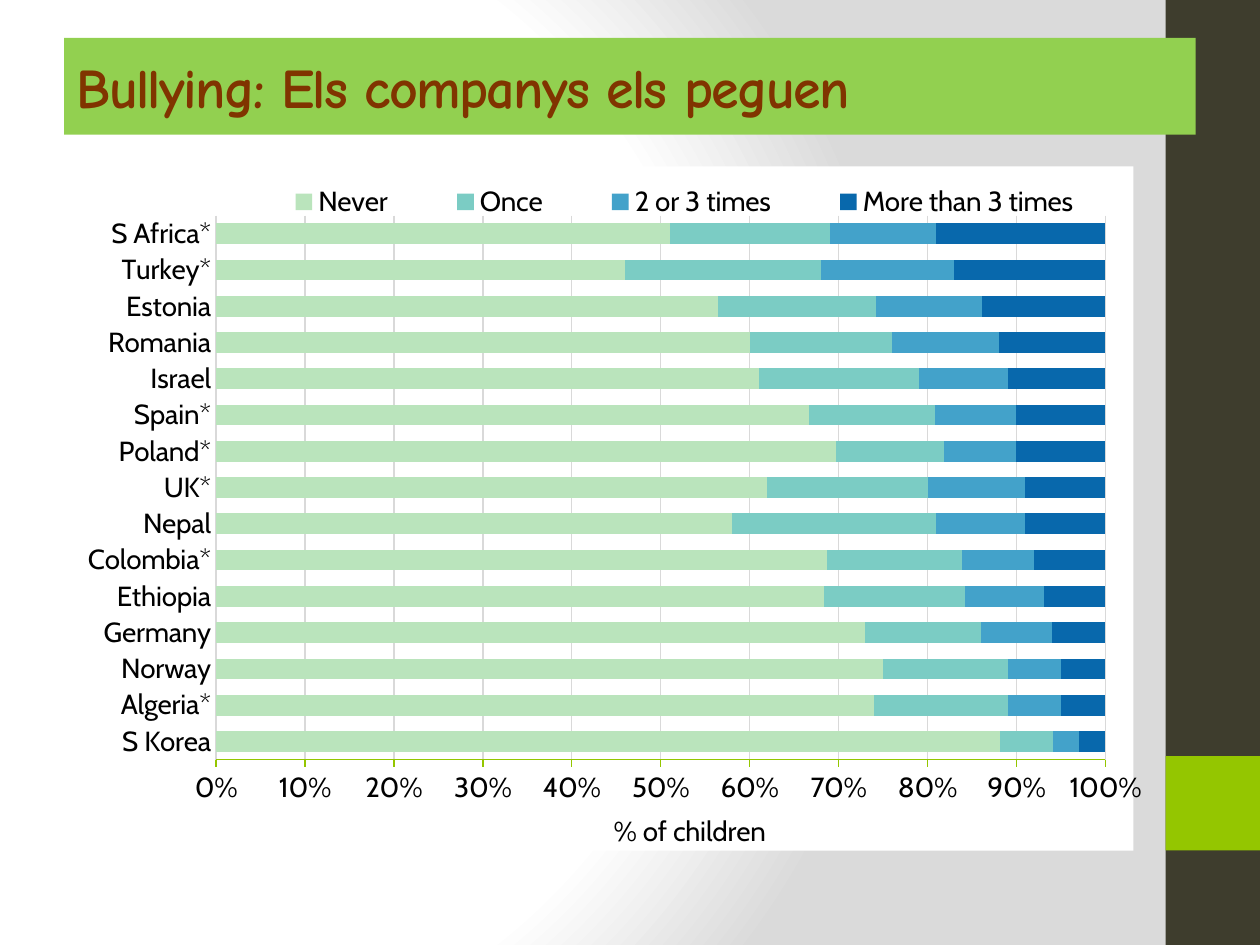
from dataclasses import dataclass

from lxml.etree import SubElement
from pptx import Presentation
from pptx.chart.data import CategoryChartData
from pptx.dml.color import RGBColor
from pptx.enum.chart import XL_CHART_TYPE, XL_LEGEND_POSITION, XL_TICK_MARK
from pptx.enum.shapes import MSO_SHAPE
from pptx.enum.text import MSO_ANCHOR, PP_ALIGN
from pptx.oxml import parse_xml
from pptx.oxml.ns import nsdecls, qn
from pptx.util import Inches, Pt


@dataclass(frozen=True)
class Theme:
    white: str = "FFFFFF"
    shade: str = "DADADA"
    side_band: str = "3E3D2D"
    accent: str = "94C600"
    title_fill: str = "92D050"
    title_text: str = "803400"
    text: str = "000000"
    grid: str = "D9D9D9"
    title_font: str = "Comic Neue"
    chart_font: str = "Cabin"
    title_size: int = 32
    chart_size: int = 16
    line_width: float = 0.75


THEME = Theme()

COUNTRIES = [
    "S Korea", "Algeria*", "Norway", "Germany", "Ethiopia",
    "Colombia*", "Nepal", "UK*", "Poland*", "Spain*",
    "Israel", "Romania", "Estonia", "Turkey*", "S Africa*",
]
SERIES = [
    ("Never", "BAE4BC", [89, 74, 75, 73, 69, 68, 58, 62, 69, 66, 61, 60, 57, 46, 51]),
    ("Once", "7BCCC4", [6, 15, 14, 13, 16, 15, 23, 18, 12, 14, 18, 16, 18, 22, 18]),
    ("2 or 3 times", "43A2CA", [3, 6, 6, 8, 9, 8, 10, 11, 8, 9, 10, 12, 12, 15, 12]),
    ("More than 3 times", "0868AC", [3, 5, 5, 6, 7, 8, 9, 9, 10, 10, 11, 12, 14, 17, 19]),
]


def color(value):
    return RGBColor.from_string(value)


def set_background(slide):
    """Fill the slide with a radial gradient, which has no public method."""
    stops = [(0, THEME.white), (75, THEME.white), (100, THEME.shade)]
    stop_xml = "".join(
        f'<a:gs pos="{position * 1000}"><a:srgbClr val="{value}"/></a:gs>'
        for position, value in stops
    )
    background = parse_xml(
        f'<p:bg {nsdecls("p", "a")}><p:bgPr><a:gradFill rotWithShape="1">'
        f'<a:gsLst>{stop_xml}</a:gsLst><a:path path="circle">'
        '<a:fillToRect l="20000" t="50000" r="100000" b="50000"/></a:path>'
        "</a:gradFill><a:effectLst/></p:bgPr></p:bg>"
    )
    slide.element.find(qn("p:cSld")).insert(0, background)


def add_rectangle(slide, left, top, width, height, fill):
    shape = slide.shapes.add_shape(
        MSO_SHAPE.RECTANGLE, Inches(left), Inches(top), Inches(width), Inches(height)
    )
    shape.shadow.inherit = False
    shape.fill.solid()
    shape.fill.fore_color.rgb = color(fill)
    shape.line.fill.background()
    return shape


def add_title(slide, text):
    shape = add_rectangle(slide, 0.51, 0.3, 8.98, 0.77, THEME.title_fill)
    frame = shape.text_frame
    frame.word_wrap = True
    frame.vertical_anchor = MSO_ANCHOR.MIDDLE
    paragraph = frame.paragraphs[0]
    paragraph.alignment = PP_ALIGN.LEFT
    run = paragraph.add_run()
    run.text = text
    style_font(run.font, THEME.title_font, THEME.title_size, THEME.title_text, True)
    run.font._element.set("spc", "-100")


def style_font(font, name, size, text_color, bold=False):
    font.name = name
    font.size = Pt(size)
    font.bold = bold
    font.color.rgb = color(text_color)


def style_chart_font(font):
    style_font(font, THEME.chart_font, THEME.chart_size, THEME.text)


def style_line(line, line_color):
    line.color.rgb = color(line_color)
    line.width = Pt(THEME.line_width)


def style_axis(axis, line_color, tick_mark):
    style_chart_font(axis.tick_labels.font)
    style_line(axis.format.line, line_color)
    axis.major_tick_mark = tick_mark
    axis.minor_tick_mark = XL_TICK_MARK.NONE


def place_part(part, x, y, width=None, height=None, inner=False):
    """Place a chart part by fractions of the chart's size."""
    for old_layout in part.findall(qn("c:layout")):
        part.remove(old_layout)
    layout = parse_xml(f'<c:layout {nsdecls("c")}><c:manualLayout/></c:layout>')
    settings = [("layoutTarget", "inner")] if inner else []
    settings += [("xMode", "edge"), ("yMode", "edge"), ("x", x), ("y", y)]
    if width is not None:
        settings += [("w", width), ("h", height)]
    for tag, value in settings:
        SubElement(layout[0], qn(f"c:{tag}")).set("val", str(value))
    overlay = part.find(qn("c:overlay"))
    if overlay is None:
        part.insert(0, layout)
    else:
        overlay.addprevious(layout)


def fill_chart_area(chart):
    chart.element.find(qn("c:txPr")).addprevious(parse_xml(
        f'<c:spPr {nsdecls("c", "a")}><a:solidFill><a:srgbClr val="{THEME.white}"/>'
        "</a:solidFill><a:ln><a:noFill/></a:ln></c:spPr>"
    ))


def add_bullying_chart(slide):
    data = CategoryChartData(number_format="0")
    data.categories = COUNTRIES
    for name, _, values in SERIES:
        data.add_series(name, values)
    chart = slide.shapes.add_chart(
        XL_CHART_TYPE.BAR_STACKED_100,
        Inches(0.46), Inches(1.32), Inches(8.6), Inches(5.48), data,
    ).chart
    style_chart_font(chart.font)
    fill_chart_area(chart)
    chart.has_title = False

    plot = chart.plots[0]
    plot.gap_width = 75
    plot.overlap = 100
    plot.vary_by_categories = False
    for series, (_, fill, _) in zip(plot.series, SERIES):
        series.format.fill.solid()
        series.format.fill.fore_color.rgb = color(fill)

    style_axis(chart.category_axis, THEME.grid, XL_TICK_MARK.NONE)
    axis = chart.value_axis
    style_axis(axis, THEME.accent, XL_TICK_MARK.OUTSIDE)
    axis.minimum_scale, axis.maximum_scale, axis.major_unit = 0, 1, 0.1
    axis.tick_labels.number_format = "0%"
    axis.tick_labels.number_format_is_linked = False
    axis.has_major_gridlines = True
    style_line(axis.major_gridlines.format.line, THEME.grid)
    run = axis.axis_title.text_frame.paragraphs[0].add_run()
    run.text = "% of children"
    style_chart_font(run.font)

    chart.has_legend = True
    chart.legend.position = XL_LEGEND_POSITION.TOP
    chart.legend.include_in_layout = False
    style_chart_font(chart.legend.font)

    plot_area = chart.element.find(f".//{qn('c:plotArea')}")
    place_part(plot_area, 0.147, 0.072, 0.827, 0.795, inner=True)
    place_part(plot_area.find(f".//{qn('c:title')}"), 0.512, 0.937)
    place_part(chart.element.find(f".//{qn('c:legend')}"), 0.165, 0.022, 0.835, 0.06)


def main():
    presentation = Presentation()
    presentation.slide_width = Inches(10)
    presentation.slide_height = Inches(7.5)
    slide = presentation.slides.add_slide(presentation.slide_layouts[6])
    set_background(slide)
    add_rectangle(slide, 9.25, 0, 0.75, 7.5, THEME.side_band)
    add_rectangle(slide, 9.25, 6, 0.75, 0.75, THEME.accent)
    add_title(slide, "Bullying: Els companys els peguen")
    add_bullying_chart(slide)
    presentation.save("out.pptx")


if __name__ == "__main__":
    main()
